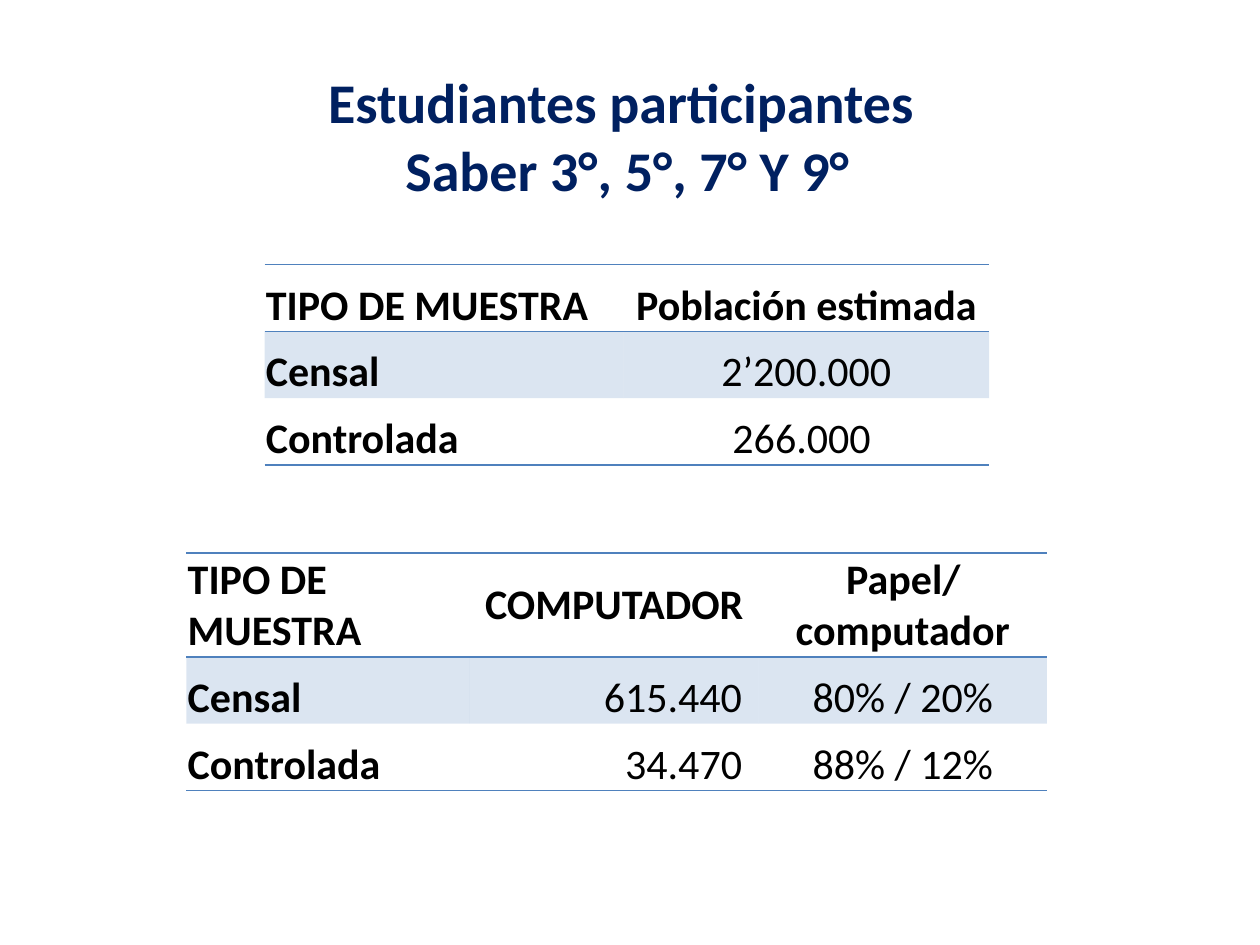
from pptx import Presentation
from pptx.dml.color import RGBColor
from pptx.enum.text import MSO_ANCHOR, PP_ALIGN
from pptx.oxml import parse_xml
from pptx.oxml.ns import nsdecls
from pptx.util import Inches, Pt

LEFT, CENTER, RIGHT = PP_ALIGN.LEFT, PP_ALIGN.CENTER, PP_ALIGN.RIGHT
BOTTOM, MIDDLE = MSO_ANCHOR.BOTTOM, MSO_ANCHOR.MIDDLE

NAVY = RGBColor(0x00, 0x20, 0x60)
BLACK = RGBColor(0x00, 0x00, 0x00)
BLUE = RGBColor(0x4F, 0x81, 0xBD)

# The slide is a grid of 100 columns by 75 rows
COLUMNS, ROWS = 100, 75
CELL = Inches(0.1)
BODY_ROW = 5.3

TITLE_FONT = {"name": "Calibri", "size": Pt(32), "bold": True}
TABLE_FONT = {"name": "Calibri", "size": Pt(24)}
CELL_MARGINS = {"margin_left": Inches(0.01), "margin_right": Inches(0.01),
                "margin_top": Inches(0.01), "margin_bottom": 0}


def grid(value):
    return round(value * CELL)


def set_attributes(target, values):
    for name, value in values.items():
        setattr(target, name, value)


def write(paragraph, text, alignment, font_values, color):
    paragraph.text = text
    paragraph.alignment = alignment
    set_attributes(paragraph.font, font_values)
    paragraph.font.color.rgb = color


def add_title(slide, box, lines):
    text_frame = slide.shapes.add_textbox(*map(grid, box)).text_frame
    text_frame.word_wrap = True
    for index, line in enumerate(lines):
        paragraph = text_frame.add_paragraph() if index else text_frame.paragraphs[0]
        write(paragraph, line, CENTER, TITLE_FONT, NAVY)


def set_borders(cell, ruled_sides):
    """Rule the named sides in blue and clear the others."""
    properties = cell._tc.get_or_add_tcPr()
    for position, side in enumerate("LRTB"):
        paint = "<a:noFill/>"
        if side in ruled_sides:
            paint = f'<a:solidFill><a:srgbClr val="{BLUE}"/></a:solidFill>'
        line = f'<a:ln{side} w="{Pt(1)}" {nsdecls("a")}>{paint}</a:ln{side}>'
        properties.insert(position, parse_xml(line))


def shade(cell):
    """Fill the cell with blue at 20 % opacity."""
    cell.fill.solid()
    cell.fill.fore_color.rgb = BLUE
    color = cell._tc.tcPr.find(".//{*}srgbClr")
    color.append(parse_xml(f'<a:alpha {nsdecls("a")} val="20000"/>'))


def add_sample_table(slide, left, top, widths, header_height, records,
                     alignments, header_anchors):
    heights = [header_height] + [BODY_ROW] * (len(records) - 1)
    frame = slide.shapes.add_table(len(records), len(widths), *map(
        grid, (left, top, sum(widths), sum(heights))))
    table = frame.table
    table.first_row = table.horz_banding = False
    for column, width in zip(table.columns, widths):
        column.width = grid(width)
    for row, height in zip(table.rows, heights):
        row.height = grid(height)

    last = len(records) - 1
    for row_index, record in enumerate(records):
        header = row_index == 0
        # Rules run above and below the header and under the last row
        ruled = ("T" if row_index <= 1 else "") + ("B" if row_index in (0, last) else "")
        for column_index, text in enumerate(record):
            cell = table.cell(row_index, column_index)
            set_attributes(cell, CELL_MARGINS)
            cell.vertical_anchor = header_anchors[column_index] if header else BOTTOM
            alignment = alignments[column_index]
            if header and column_index:
                alignment = CENTER
            if alignment == RIGHT:
                cell.margin_right = Inches(0.13)
            bold = header or column_index == 0
            write(cell.text_frame.paragraphs[0], text, alignment,
                  TABLE_FONT | {"bold": bold}, BLACK)
            if row_index == 1:
                shade(cell)
            else:
                cell.fill.background()
            set_borders(cell, ruled)


def main():
    presentation = Presentation()
    presentation.slide_width = grid(COLUMNS)
    presentation.slide_height = grid(ROWS)
    slide = presentation.slides.add_slide(presentation.slide_layouts[6])

    # Share of students by medium
    add_sample_table(
        slide, 14.8, 43.9, (22.5, 22.9, 22.9), 8.1,
        [("TIPO DE MUESTRA", "COMPUTADOR", "Papel/computador"),
         ("Censal", "615.440", "80% / 20%"),
         ("Controlada", "34.470", "88% / 12%")],
        (LEFT, RIGHT, CENTER), (BOTTOM, MIDDLE, MIDDLE))

    add_title(slide, (10.2, 4.9, 79.2, 11.8),
              ("Estudiantes participantes ", "Saber 3°, 5°, 7° Y 9°"))

    # Estimated population
    add_sample_table(
        slide, 21, 21, (28.5, 29), BODY_ROW,
        [("TIPO DE MUESTRA", "Población estimada"),
         ("Censal", "2’200.000"),
         ("Controlada", "266.000 ")],
        (LEFT, CENTER), (BOTTOM, BOTTOM))

    presentation.save("out.pptx")


if __name__ == "__main__":
    main()
